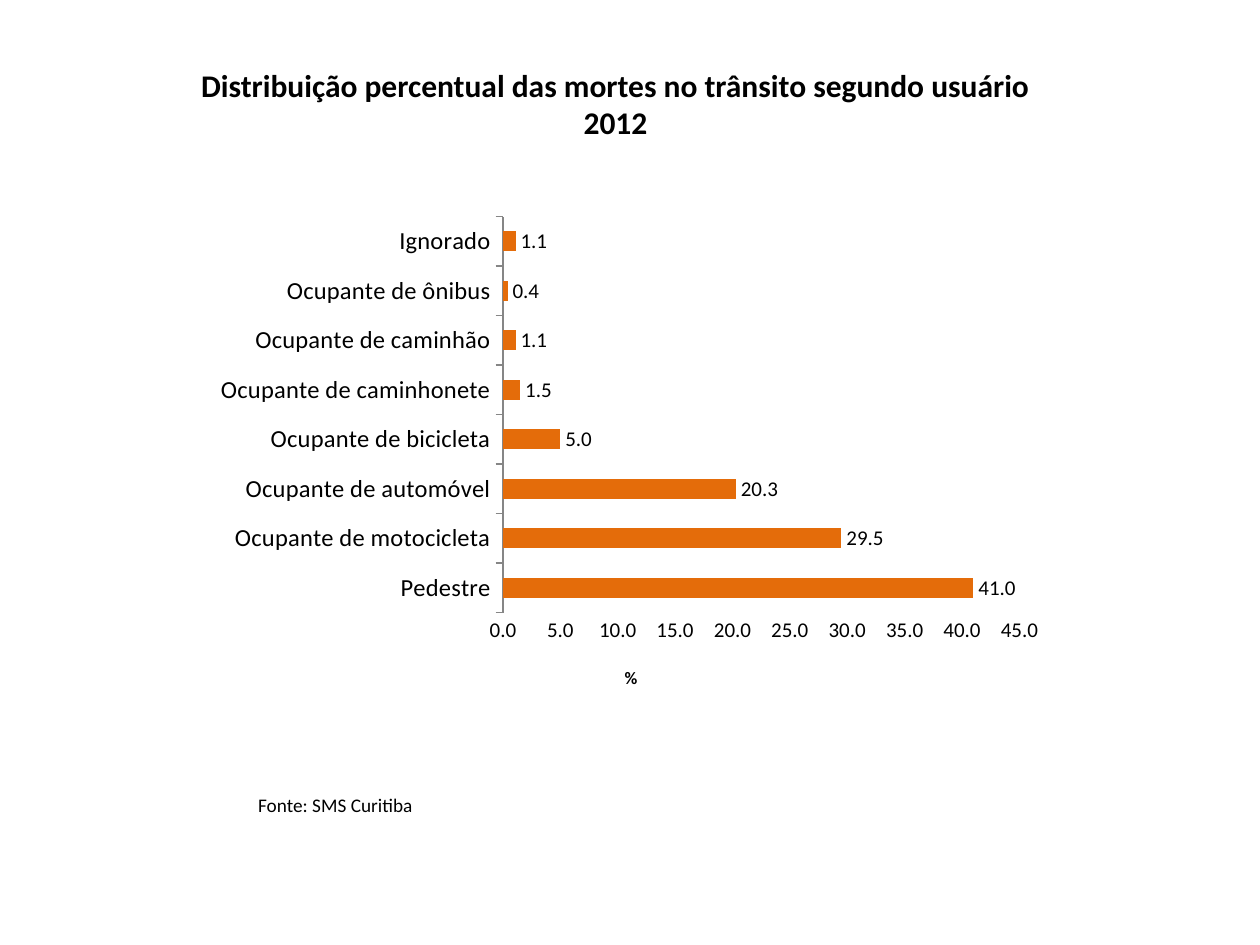
from dataclasses import dataclass

from lxml import etree
from pptx import Presentation
from pptx.chart.data import CategoryChartData
from pptx.dml.color import RGBColor
from pptx.enum.chart import XL_CHART_TYPE, XL_LABEL_POSITION, XL_TICK_MARK
from pptx.enum.text import MSO_ANCHOR, MSO_AUTO_SIZE, PP_ALIGN
from pptx.oxml.ns import qn
from pptx.util import Emu, Pt

PX = 9144  # 100 px to the inch


@dataclass(frozen=True)
class Theme:
    font: str = "Calibri"
    ink: str = "000000"
    bar: str = "E46C0A"
    axis: str = "868686"
    grid: str = "FFFFFF"
    title_size: int = 18
    category_size: int = 14
    value_size: int = 12
    source_size: int = 11
    unit_size: int = 10


def set_layout(parent, **fractions):
    """Fix the place of a chart part, in fractions of the chart area."""
    layout = parent.find(qn("c:layout"))
    if layout is None:
        layout = etree.Element(qn("c:layout"))
        parent.insert(0, layout)
    manual = etree.SubElement(layout, qn("c:manualLayout"))
    if "w" in fractions:
        etree.SubElement(manual, qn("c:layoutTarget")).set("val", "inner")
    for side in ("x", "y"):
        etree.SubElement(manual, qn(f"c:{side}Mode")).set("val", "edge")
    for key, value in fractions.items():
        etree.SubElement(manual, qn(f"c:{key}")).set("val", str(value))


class SlideBuilder:
    def __init__(self, slide, theme):
        self.slide = slide
        self.theme = theme

    def style_font(self, font, size, bold=False):
        font.name = self.theme.font
        font.size = Pt(size)
        font.bold = bold
        font.color.rgb = RGBColor.from_string(self.theme.ink)

    def fill_frame(self, frame, text, size, bold=False, align=PP_ALIGN.LEFT):
        frame.text = text
        frame.word_wrap = True
        frame.auto_size = MSO_AUTO_SIZE.NONE
        frame.vertical_anchor = MSO_ANCHOR.TOP
        paragraph = frame.paragraphs[0]
        paragraph.alignment = align
        self.style_font(paragraph.runs[0].font, size, bold)

    def title(self, text, *box):
        heading = self.slide.shapes.title
        heading.left, heading.top, heading.width, heading.height = (
            Emu(side * PX) for side in box)
        self.fill_frame(heading.text_frame, text, self.theme.title_size,
                        bold=True, align=PP_ALIGN.CENTER)

    def source(self, text, *box):
        note = self.slide.shapes.add_textbox(*(Emu(side * PX) for side in box))
        self.fill_frame(note.text_frame, text, self.theme.source_size)

    def bar_chart(self, shares, unit, *box):
        theme = self.theme
        data = CategoryChartData(number_format="0.0")
        data.categories = list(shares)
        data.add_series("Series 1", list(shares.values()))
        chart = self.slide.shapes.add_chart(
            XL_CHART_TYPE.BAR_CLUSTERED,
            *(Emu(side * PX) for side in box), data).chart
        chart.has_legend = chart.has_title = False
        self.style_font(chart.font, theme.unit_size)

        plot = chart.plots[0]
        plot.gap_width = 150
        plot.vary_by_categories = False
        bars = plot.series[0].format.fill
        bars.solid()
        bars.fore_color.rgb = RGBColor.from_string(theme.bar)
        plot.has_data_labels = True
        labels = plot.data_labels
        labels.show_value = True
        labels.position = XL_LABEL_POSITION.OUTSIDE_END
        labels.number_format = "0.0"
        labels.number_format_is_linked = False
        self.style_font(labels.font, theme.value_size)

        users = chart.category_axis
        users.major_tick_mark = XL_TICK_MARK.OUTSIDE
        users.format.line.color.rgb = RGBColor.from_string(theme.axis)
        users.format.line.width = Pt(0.75)
        self.style_font(users.tick_labels.font, theme.category_size)

        percent = chart.value_axis
        percent.minimum_scale, percent.maximum_scale = 0, 45
        percent.major_unit = 5
        percent.major_tick_mark = XL_TICK_MARK.NONE
        percent.format.line.fill.background()
        grid = percent.major_gridlines.format.line
        grid.color.rgb = RGBColor.from_string(theme.grid)
        grid.width = Pt(0.75)
        percent.tick_labels.number_format = "0.0"
        percent.tick_labels.number_format_is_linked = False
        self.style_font(percent.tick_labels.font, theme.value_size)
        unit_title = percent.axis_title
        unit_frame = unit_title.text_frame
        unit_frame.text = unit
        self.style_font(unit_frame.paragraphs[0].runs[0].font,
                        theme.unit_size, bold=True)

        plot_area = chart.element.find(".//" + qn("c:plotArea"))
        set_layout(plot_area, x=0.35, y=0.02, w=0.61, h=0.79)
        set_layout(plot_area.find(".//" + qn("c:title")), x=0.49, y=0.91)


def main():
    deck = Presentation()
    deck.slide_width, deck.slide_height = Emu(1000 * PX), Emu(750 * PX)
    title_only = deck.slide_layouts[5]
    builder = SlideBuilder(deck.slides.add_slide(title_only), Theme())
    builder.title(
        "Distribuição percentual das mortes no trânsito segundo usuário 2012",
        141, 47, 695, 71)
    deaths_by_user = {
        "Pedestre": 41,
        "Ocupante de motocicleta": 29.5,
        "Ocupante de automóvel": 20.3,
        "Ocupante de bicicleta": 5,
        "Ocupante de caminhonete": 1.5,
        "Ocupante de caminhão": 1.1,
        "Ocupante de ônibus": 0.4,
        "Ignorado": 1.1,
    }
    builder.bar_chart(deaths_by_user, "%", 164, 164, 672, 398)
    builder.source("Fonte: SMS Curitiba", 195, 625, 602, 29)
    deck.save("out.pptx")


if __name__ == "__main__":
    main()
